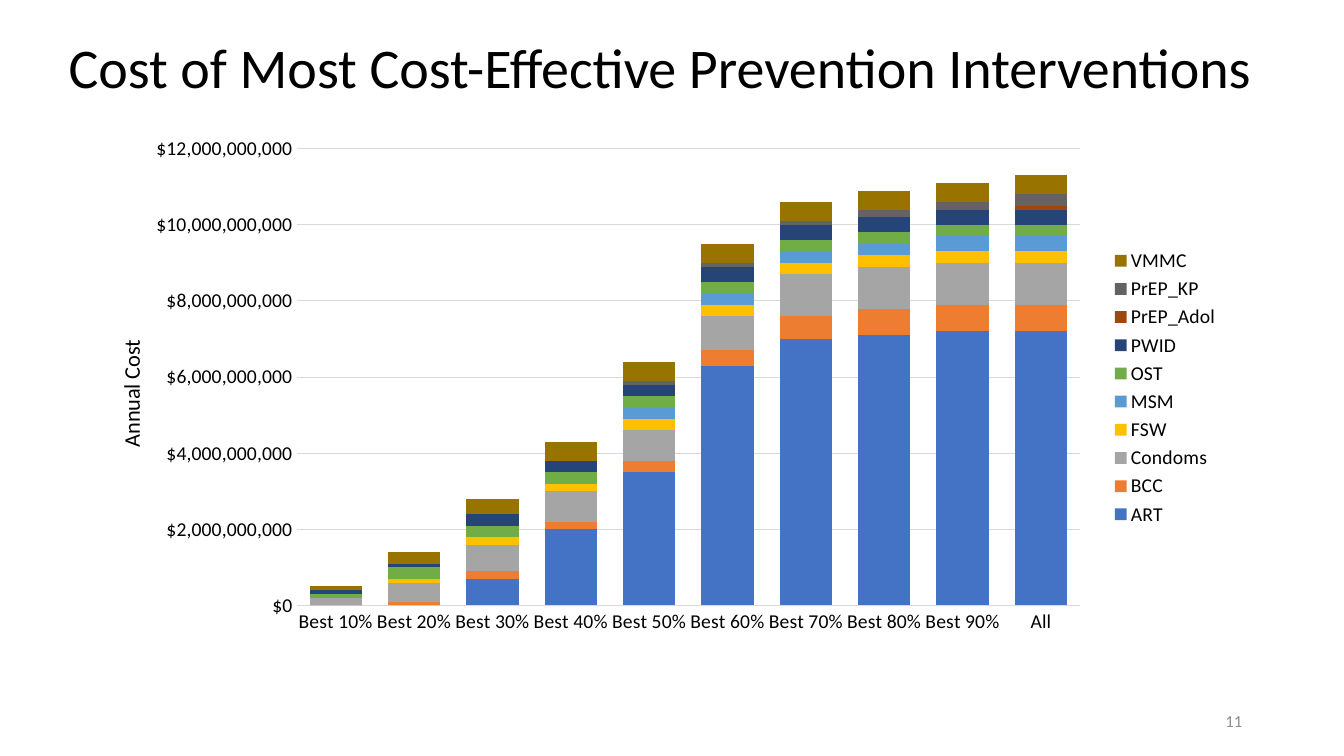
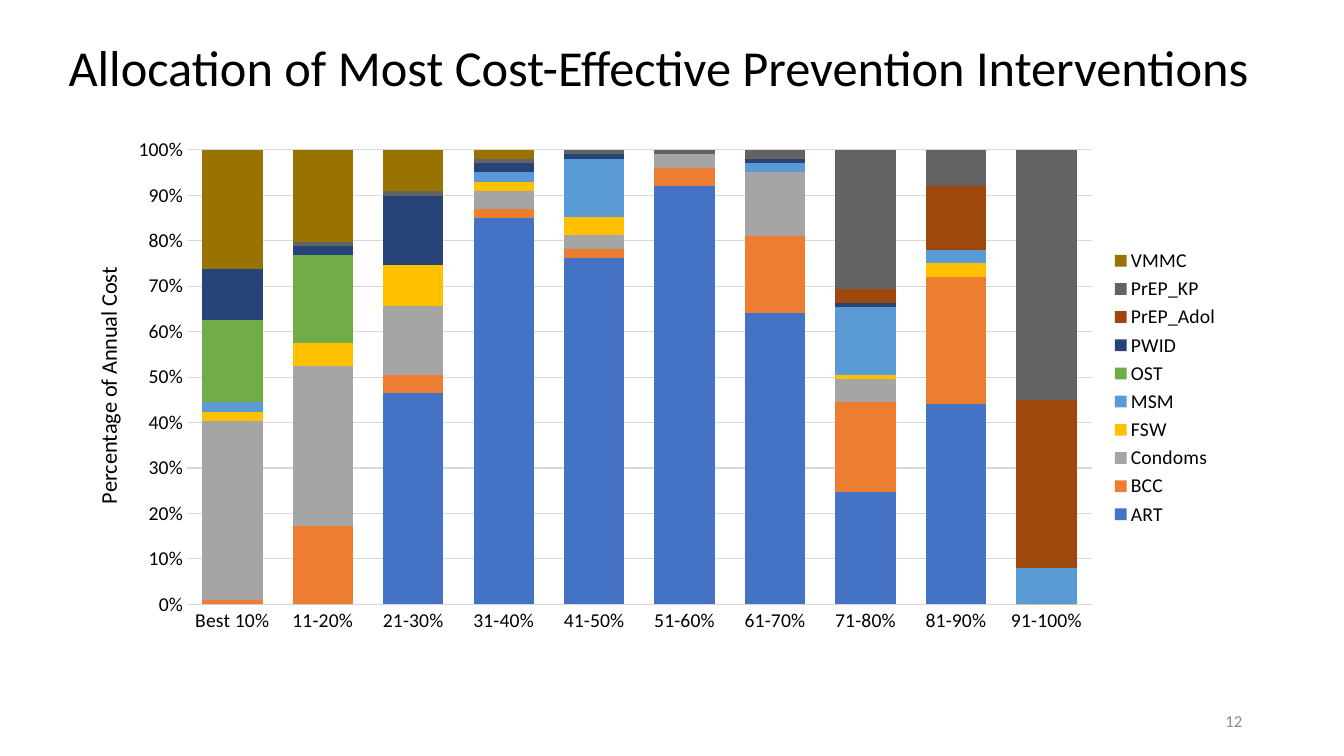
from lxml import etree
from pptx import Presentation
from pptx.chart.data import CategoryChartData
from pptx.dml.color import RGBColor
from pptx.enum.chart import XL_CHART_TYPE, XL_LEGEND_POSITION, XL_TICK_MARK
from pptx.enum.text import MSO_ANCHOR, MSO_AUTO_SIZE, PP_ALIGN
from pptx.oxml.ns import qn
from pptx.util import Inches, Pt

BLACK, GRID, PAGE_GRAY = "000000", "D9D9D9", "8C8C8C"
COLORS = {
    "ART": "4472C4", "BCC": "ED7D31", "Condoms": "A5A5A5", "FSW": "FFC000",
    "MSM": "5B9BD5", "OST": "70AD47", "PWID": "264478",
    "PrEP_Adol": "9E480E", "PrEP_KP": "636363", "VMMC": "997300",
}
HUNDRED_MILLION = 100_000_000

# Each row of values follows the order of COLORS.
SLIDES = [
    {
        "page": 11, "title": "Cost of Most Cost-Effective Prevention Interventions",
        "title_size": 40, "kind": XL_CHART_TYPE.COLUMN_STACKED,
        "axis": "Annual Cost", "format": '"$"#,##0',
        "top": 120 * HUNDRED_MILLION, "step": 20 * HUNDRED_MILLION,
        "unit": HUNDRED_MILLION,
        "plot": {"x": 0.19, "y": 0.04, "w": 0.68, "h": 0.88},
        "axis_place": {"x": 0.03, "y": 0.4},
        "categories": [f"Best {n}%" for n in range(10, 100, 10)] + ["All"],
        "values": [
            [0, 0, 7, 20, 35, 63, 70, 71, 72, 72],
            [0, 1, 2, 2, 3, 4, 6, 7, 7, 7],
            [2, 5, 7, 8, 8, 9, 11, 11, 11, 11],
            [0, 1, 2, 2, 3, 3, 3, 3, 3, 3],
            [0, 0, 0, 0, 3, 3, 3, 3, 4, 4],
            [1, 3, 3, 3, 3, 3, 3, 3, 3, 3],
            [1, 1, 3, 3, 3, 4, 4, 4, 4, 4],
            [0, 0, 0, 0, 0, 0, 0, 0, 0, 1],
            [0, 0, 0, 0, 1, 1, 1, 2, 2, 3],
            [1, 3, 4, 5, 5, 5, 5, 5, 5, 5],
        ],
    },
    {
        "page": 12, "title": "Allocation of Most Cost-Effective Prevention Interventions",
        "title_size": 36, "kind": XL_CHART_TYPE.COLUMN_STACKED_100,
        "axis": "Percentage of Annual Cost", "format": "0%",
        "top": 1, "step": 0.1, "unit": 1,
        "plot": {"x": 0.095, "y": 0.042, "w": 0.785, "h": 0.876},
        "axis_place": {"x": 0.01, "y": 0.26},
        "categories": ["Best 10%"] + [f"{n + 1}-{n + 10}%" for n in range(10, 100, 10)],
        "values": [
            [0, 0, 46, 85, 77, 91, 64, 25, 44, 0],
            [1, 17, 4, 2, 2, 4, 17, 20, 28, 0],
            [39, 35, 15, 4, 3, 3, 14, 5, 0, 0],
            [2, 5, 9, 2, 4, 0, 0, 1, 3, 0],
            [2, 0, 0, 2, 13, 0, 2, 15, 3, 8],
            [18, 19, 0, 0, 0, 0, 0, 0, 0, 0],
            [11, 2, 15, 2, 1, 0, 1, 1, 0, 0],
            [0, 0, 0, 0, 0, 0, 0, 3, 14, 37],
            [0, 1, 1, 1, 1, 1, 2, 31, 8, 55],
            [26, 20, 9, 2, 0, 0, 0, 0, 0, 0],
        ],
    },
]


def set_font(font, size, color=BLACK):
    font.name = "Calibri"
    font.size = Pt(size)
    font.bold = False
    font.color.rgb = RGBColor.from_string(color)


def place_in_chart(part, index, shares):
    """Give a chart part a manual layout, in shares of the chart's size."""
    layout = part.find(qn("c:layout"))
    if layout is None:
        layout = etree.Element(qn("c:layout"))
        part.insert(index, layout)
    manual = etree.SubElement(layout, qn("c:manualLayout"))
    if "w" in shares:
        etree.SubElement(manual, qn("c:layoutTarget")).set("val", "inner")
    for side in "xy":
        etree.SubElement(manual, qn(f"c:{side}Mode")).set("val", "edge")
    for side, share in shares.items():
        etree.SubElement(manual, qn(f"c:{side}")).set("val", str(share))


deck = Presentation()
deck.slide_width, deck.slide_height = Inches(13.33), Inches(7.5)
title_only = deck.slide_layouts[5]

for content in SLIDES:
    slide = deck.slides.add_slide(title_only)

    title = slide.shapes.title
    title.left, title.top = Inches(0.58), Inches(0.31)
    title.width, title.height = Inches(12.36), Inches(0.77)
    title.text_frame.text = content["title"]
    title.text_frame.auto_size = MSO_AUTO_SIZE.NONE
    title.text_frame.vertical_anchor = MSO_ANCHOR.MIDDLE
    heading = title.text_frame.paragraphs[0]
    heading.alignment = PP_ALIGN.LEFT
    heading.line_spacing = 0.9
    set_font(heading.font, content["title_size"])

    chart_data = CategoryChartData()
    chart_data.categories = content["categories"]
    for intervention, row in zip(COLORS, content["values"]):
        chart_data.add_series(intervention, [value * content["unit"] for value in row])
    chart = slide.shapes.add_chart(
        content["kind"], Inches(0.77), Inches(1.27), Inches(11.43), Inches(5.15), chart_data
    ).chart
    chart.has_title = False
    set_font(chart.font, 10)
    chart.has_legend = True
    chart.legend.position = XL_LEGEND_POSITION.RIGHT
    chart.legend.include_in_layout = False
    set_font(chart.legend.font, 14)

    bars = chart.plots[0]
    bars.gap_width, bars.overlap = 50, 100
    bars.vary_by_categories = False
    for series, color in zip(bars.series, COLORS.values()):
        series.format.fill.solid()
        series.format.fill.fore_color.rgb = RGBColor.from_string(color)

    costs = chart.value_axis
    for axis in (chart.category_axis, costs):
        axis.major_tick_mark = axis.minor_tick_mark = XL_TICK_MARK.NONE
        set_font(axis.tick_labels.font, 14)
    for line in (chart.category_axis.format.line, costs.major_gridlines.format.line):
        line.color.rgb = RGBColor.from_string(GRID)
        line.width = Pt(0.75)
    costs.format.line.fill.background()
    costs.minimum_scale, costs.maximum_scale = 0, content["top"]
    costs.major_unit = content["step"]
    costs.tick_labels.number_format = content["format"]
    costs.tick_labels.number_format_is_linked = False

    axis_title = costs.axis_title
    axis_title.text_frame.text = content["axis"]
    set_font(axis_title.text_frame.paragraphs[0].font, 16)
    text_direction = axis_title.element.find(".//" + qn("a:bodyPr"))
    text_direction.set("rot", "-5400000")
    text_direction.set("vert", "horz")
    place_in_chart(axis_title.element, 1, content["axis_place"])
    place_in_chart(chart.element.find(".//" + qn("c:plotArea")), 0, content["plot"])

    footer = slide.shapes.add_textbox(
        Inches(9.42), Inches(6.95), Inches(3), Inches(0.4)
    ).text_frame
    footer.word_wrap = True
    footer.vertical_anchor = MSO_ANCHOR.MIDDLE
    footer.text = str(content["page"])
    footer.paragraphs[0].alignment = PP_ALIGN.RIGHT
    set_font(footer.paragraphs[0].font, 12, PAGE_GRAY)

deck.save("out.pptx")
